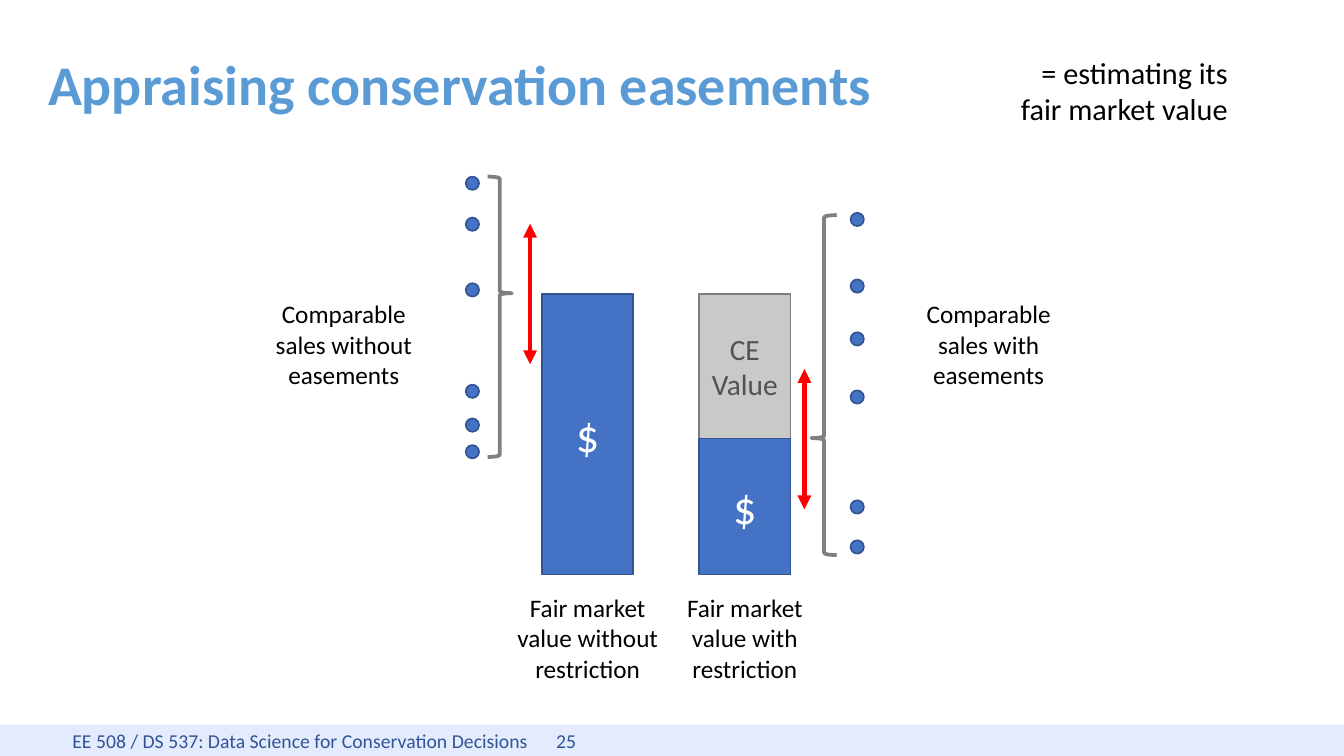
from lxml.etree import SubElement
from pptx import Presentation
from pptx.dml.color import RGBColor
from pptx.enum.shapes import MSO_CONNECTOR, MSO_SHAPE
from pptx.enum.text import MSO_ANCHOR, PP_ALIGN
from pptx.oxml.ns import qn
from pptx.util import Cm, Pt

FONT = "Calibri"
BLUE, BLUE_EDGE = "4472C4", "325491"
DOT_SIZE = 0.28


def color(value):
    return RGBColor.from_string(value)


def write(shape, text, size, text_color, align=PP_ALIGN.CENTER,
          anchor=MSO_ANCHOR.TOP, bold=False):
    frame = shape.text_frame
    frame.word_wrap = True
    frame.vertical_anchor = anchor
    paragraph = frame.paragraphs[0]
    paragraph.alignment = align
    run = paragraph.add_run()
    run.text = text
    run.font.name = FONT
    run.font.size = Pt(size)
    run.font.bold = bold
    run.font.color.rgb = color(text_color)
    return paragraph


def add_text(slide, box, text, size, text_color="000000", **style):
    shape = slide.shapes.add_textbox(*map(Cm, box))
    return write(shape, text, size, text_color, **style)


def add_preset(slide, preset, box, fill=None, line=None, width=1):
    shape = slide.shapes.add_shape(preset, *map(Cm, box))
    shape.shadow.inherit = False
    if fill:
        shape.fill.solid()
        shape.fill.fore_color.rgb = color(fill)
    else:
        shape.fill.background()
    if line:
        shape.line.color.rgb = color(line)
        shape.line.width = Pt(width)
    else:
        shape.line.fill.background()
    return shape


def add_footer(slide, box):
    band = add_preset(slide, MSO_SHAPE.RECTANGLE, box, "E3EBFC")
    band.text_frame.margin_left = Cm(1.52)
    band.text_frame.margin_top = band.text_frame.margin_bottom = 0
    properties = band.text_frame.paragraphs[0]._p.get_or_add_pPr()
    tabs = SubElement(properties, qn("a:tabLst"))
    SubElement(tabs, qn("a:tab"), pos=str(Cm(10.16)), algn="l")
    paragraph = write(band, "EE 508 / DS 537: Data Science for Conservation Decisions",
                      11.7, "2F5597", PP_ALIGN.LEFT, MSO_ANCHOR.MIDDLE)
    number = paragraph.add_run()
    number.text = "\t25"
    number.font.name = FONT
    number.font.size = Pt(11.7)
    number.font.color.rgb = color("2F5597")


def add_header(slide, box):
    left, top, width, height = box
    title = add_text(slide, box, "Appraising conservation easements", 33.3, "5B9BD5",
                     align=PP_ALIGN.LEFT, anchor=MSO_ANCHOR.MIDDLE, bold=True)
    title.line_spacing = 0.9
    add_text(slide, (left + width - 6.91, top + 0.28, 5.28, 1.8),
             "= estimating its fair market value", 18, align=PP_ALIGN.RIGHT)


def add_value_bar(slide, box, segments, caption, caption_width):
    """Stack (text, size, height, fill, line, text color) segments from the top."""
    left, top, width, height = box
    segment_top = top
    for text, size, segment_height, fill, line, text_color in segments:
        bar = add_preset(slide, MSO_SHAPE.RECTANGLE,
                         (left, segment_top, width, segment_height), fill, line)
        write(bar, text, size, text_color, anchor=MSO_ANCHOR.MIDDLE)
        segment_top += segment_height
    add_text(slide, (left + (width - caption_width) / 2, top + height + 0.25,
                     caption_width, 2.18), caption, 15)


def add_sales(slide, box, brace, tip, dots_left, dots, label_left, label):
    """Bracket the sales dots, given as offsets from the top of the brace."""
    left, top, width, height = box
    shape = add_preset(slide, brace, box, line="808080", width=2.25)
    shape.adjustments[0] = 0.083
    shape.adjustments[1] = tip
    for offset in dots:
        add_preset(slide, MSO_SHAPE.OVAL,
                   (left + dots_left, top + offset, DOT_SIZE, DOT_SIZE), BLUE, BLUE_EDGE)
    add_text(slide, (left + label_left, 6.15, 3.78, 2.18), label, 15)


def add_range_arrow(slide, x, top, length=2.95):
    arrow = slide.shapes.add_connector(
        MSO_CONNECTOR.STRAIGHT, Cm(x), Cm(top), Cm(x), Cm(top + length))
    arrow.line.color.rgb = color("FF0000")
    arrow.line.width = Pt(2.75)
    line = arrow.line._get_or_add_ln()
    for end in ("a:headEnd", "a:tailEnd"):
        SubElement(line, qn(end), type="triangle")
    SubElement(arrow._element.spPr, qn("a:effectLst"))


def main():
    presentation = Presentation()
    presentation.slide_width = Cm(28.22)
    presentation.slide_height = Cm(15.88)
    slide = presentation.slides.add_slide(presentation.slide_layouts[6])

    add_footer(slide, (0, 15.22, 28.22, 0.66))
    add_header(slide, (0.76, 0.74, 26.9, 2.2))

    add_value_bar(slide, (11.38, 6.17, 1.92, 5.9),
                  [("$", 27.5, 5.9, BLUE, BLUE_EDGE, "FFFFFF")],
                  "Fair market value without restriction", 3.48)
    add_value_bar(slide, (14.68, 6.17, 1.92, 5.9),
                  [("CE Value", 17.5, 3.04, "C9C9C9", "7C7C7C", "525252"),
                   ("$", 27.5, 2.86, BLUE, BLUE_EDGE, "FFFFFF")],
                  "Fair market value with restriction", 3.3)

    add_sales(slide, (10.24, 3.71, 0.51, 5.89), MSO_SHAPE.RIGHT_BRACE, 0.416,
              -0.46, (0, 0.86, 2.24, 4.37, 5.08, 5.64),
              -4.91, "Comparable sales without easements")
    add_sales(slide, (17.04, 4.52, 0.53, 7.14), MSO_SHAPE.LEFT_BRACE, 0.656,
              0.82, (-0.05, 1.35, 2.46, 3.68, 5.99, 6.83),
              1.83, "Comparable sales with easements")

    add_range_arrow(slide, 11.13, 4.7)
    add_range_arrow(slide, 16.89, 7.75)
    presentation.save("out.pptx")


if __name__ == "__main__":
    main()
